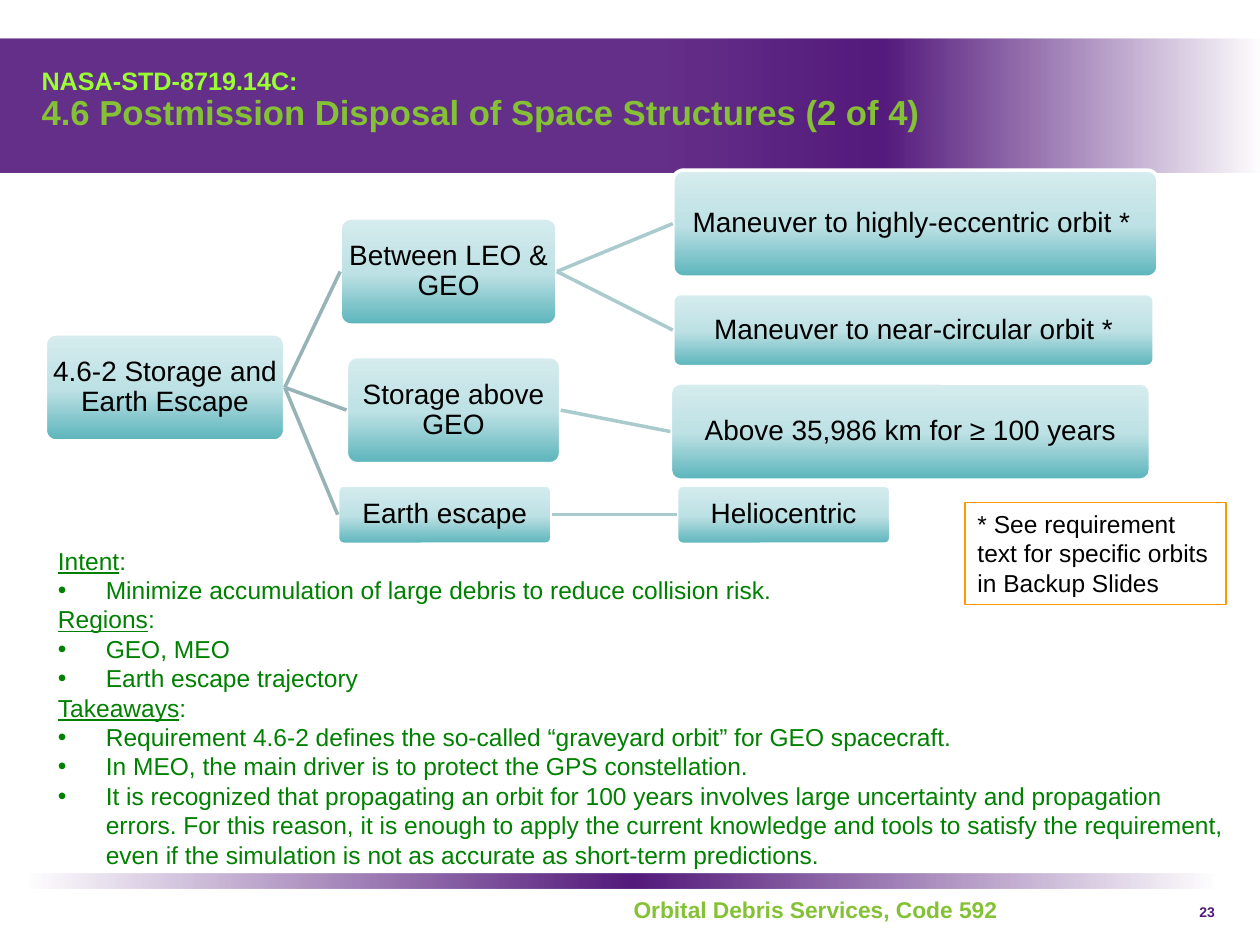
from dataclasses import dataclass
from typing import NamedTuple, Optional

from lxml.etree import SubElement
from pptx import Presentation
from pptx.dml.color import RGBColor
from pptx.enum.shapes import MSO_CONNECTOR, MSO_SHAPE
from pptx.enum.text import MSO_ANCHOR, MSO_AUTO_SIZE, PP_ALIGN
from pptx.oxml.ns import qn
from pptx.util import Inches, Pt


class Stop(NamedTuple):
    pos: int
    color: str
    alpha: int = 100


@dataclass(frozen=True)
class Theme:
    font: str = "Arial"
    purple: str = "541A7C"
    green: str = "84C134"
    lime: str = "99FF33"
    body: str = "008000"
    black: str = "000000"
    white: str = "FFFFFF"
    orange: str = "FF9900"
    link_1: str = "96B3B6"
    link_2: str = "AACBCE"
    teal: tuple = (Stop(0, "5AB4BB"), Stop(48, "BDE1E4"), Stop(100, "D6ECEE"))
    kicker_pt: float = 14.4
    title_pt: float = 19.8
    node_pt: float = 16
    text_pt: float = 14
    footer_pt: float = 13
    number_pt: float = 8


class Box(NamedTuple):
    x: float
    y: float
    w: float
    h: float


@dataclass(frozen=True)
class Node:
    text: str
    box: Box
    children: tuple = ()


T = Theme()

TREE = Node("4.6-2 Storage and Earth Escape", Box(0.36, 2.65, 1.9, 0.85), (
    Node("Between LEO & GEO", Box(2.7, 1.73, 1.72, 0.85), (
        Node("Maneuver to highly-eccentric orbit * ", Box(5.34, 1.35, 3.85, 0.85)),
        Node("Maneuver to near-circular orbit *", Box(5.34, 2.33, 3.82, 0.58)),
    )),
    Node("Storage above GEO", Box(2.75, 2.83, 1.7, 0.85), (
        Node("Above 35,986 km for ≥ 100 years", Box(5.32, 3.04, 3.81, 0.77)),
    )),
    Node("Earth escape", Box(2.68, 3.85, 1.7, 0.47), (
        Node("Heliocentric", Box(5.37, 3.85, 1.7, 0.47)),
    )),
))

SECTIONS = {
    "Intent": ["Minimize accumulation of large debris to reduce collision risk."],
    "Regions": ["GEO, MEO", "Earth escape trajectory"],
    "Takeaways": [
        "Requirement 4.6-2 defines the so-called “graveyard orbit” for GEO spacecraft.",
        "In MEO, the main driver is to protect the GPS constellation.",
        "It is recognized that propagating an orbit for 100 years involves large "
        "uncertainty and propagation errors. For this reason, it is enough to apply "
        "the current knowledge and tools to satisfy the requirement, even if the "
        "simulation is not as accurate as short-term predictions.",
    ],
}


def rgb(color: str) -> RGBColor:
    return RGBColor.from_string(color)


def add_run(p, text: str, size: float, color: str, bold: bool = False,
            underline: Optional[bool] = None) -> None:
    r = p.add_run()
    r.text = text
    r.font.name, r.font.size = T.font, Pt(size)
    r.font.bold, r.font.underline = bold, underline
    r.font.color.rgb = rgb(color)


def place(sp, box: Box) -> None:
    sp.left, sp.top, sp.width, sp.height = map(Inches, box)


def add_gradient_shape(s, kind, box: Box, stops: tuple, angle: int):
    sp = s.shapes.add_shape(kind, *map(Inches, box))
    sp.shadow.inherit = False
    sp.fill.gradient()
    sp.fill.gradient_angle = angle
    stop_list = sp.element.spPr.find(qn("a:gradFill")).find(qn("a:gsLst"))
    for old in list(stop_list):
        stop_list.remove(old)
    for stop in stops:
        gs = SubElement(stop_list, qn("a:gs"), pos=str(stop.pos * 1000))
        clr = SubElement(gs, qn("a:srgbClr"), val=stop.color)
        if stop.alpha < 100:
            SubElement(clr, qn("a:alpha"), val=str(stop.alpha * 1000))
    return sp


def add_band(s, box: Box, stops: tuple) -> None:
    sp = add_gradient_shape(s, MSO_SHAPE.RECTANGLE, box, stops, 0)
    sp.line.fill.background()


def add_label(s, box: Box, text: str, size: float, color: str, bold: bool = False,
              align=PP_ALIGN.LEFT):
    sp = s.shapes.add_textbox(*map(Inches, box))
    tf = sp.text_frame
    tf.word_wrap = True
    p = tf.paragraphs[0]
    p.alignment = align
    add_run(p, text, size, color, bold)
    return sp


def add_link(s, parent, child, color: str) -> None:
    c = s.shapes.add_connector(MSO_CONNECTOR.STRAIGHT, 0, 0, 0, 0)
    c.begin_connect(parent, 3)
    c.end_connect(child, 1)
    c.line.color.rgb, c.line.width = rgb(color), Pt(2)
    SubElement(c.element.spPr, qn("a:effectLst"))


def add_node(s, node: Node, level: int = 0):
    sp = add_gradient_shape(s, MSO_SHAPE.ROUNDED_RECTANGLE, node.box, T.teal, 90)
    sp.adjustments[0] = 0.1
    sp.line.color.rgb, sp.line.width = rgb(T.white), Pt(2)
    tf = sp.text_frame
    tf.word_wrap, tf.vertical_anchor = True, MSO_ANCHOR.MIDDLE
    tf.margin_left = tf.margin_right = tf.margin_top = tf.margin_bottom = Inches(0.01)
    p = tf.paragraphs[0]
    p.alignment, p.line_spacing = PP_ALIGN.CENTER, 0.9
    add_run(p, node.text, T.node_pt, T.black)
    for child in node.children:
        add_link(s, sp, add_node(s, child, level + 1), (T.link_1, T.link_2)[level])
    return sp


def fill_title(sp) -> None:
    place(sp, Box(0.23, 0.53, 7.43, 0.54))
    tf = sp.text_frame
    tf.auto_size, tf.vertical_anchor = MSO_AUTO_SIZE.NONE, MSO_ANCHOR.MIDDLE
    p = tf.paragraphs[0]
    p.alignment, p.line_spacing = PP_ALIGN.LEFT, 0.9
    add_run(p, "NASA-STD-8719.14C:", T.kicker_pt, T.lime, True)
    p.add_line_break()
    SubElement(p._p[-1], qn("a:rPr"), sz=str(round(T.kicker_pt * 100)))
    add_run(p, "4.6 Postmission Disposal of Space Structures (2 of 4)",
            T.title_pt, T.green, True)


def add_body_line(tf, first: bool, indent: float):
    p = tf.paragraphs[0] if first else tf.add_paragraph()
    p.space_before = Pt(0)
    pPr = p._p.get_or_add_pPr()
    pPr.set("marL", str(Inches(indent)))
    pPr.set("indent", str(-Inches(indent)))
    if indent:
        SubElement(pPr, qn("a:buChar"), char="•")
    else:
        SubElement(pPr, qn("a:buNone"))
    return p


def fill_body(sp) -> None:
    place(sp, Box(0.36, 4.28, 9.53, 2.69))
    tf = sp.text_frame
    tf.auto_size = MSO_AUTO_SIZE.SHAPE_TO_FIT_TEXT
    for i, (heading, lines) in enumerate(SECTIONS.items()):
        p = add_body_line(tf, i == 0, 0)
        add_run(p, heading, T.text_pt, T.body, underline=True)
        add_run(p, ":", T.text_pt, T.body)
        for line in lines:
            add_run(add_body_line(tf, False, 0.38), line, T.text_pt, T.body)


def main() -> None:
    """Build the postmission disposal slide and save it."""
    prs = Presentation()
    prs.slide_width, prs.slide_height = Inches(10), Inches(7.5)
    s = prs.slides.add_slide(prs.slide_layouts[1])
    title, body = s.shapes.title, s.placeholders[1]
    add_band(s, Box(0, 0.31, 10, 1.06),
             (Stop(0, T.purple, 90), Stop(53, T.purple, 90), Stop(70, T.purple), Stop(100, T.purple, 0)))
    add_band(s, Box(0.23, 6.93, 9.41, 0.12),
             (Stop(0, T.purple, 0), Stop(51, T.purple), Stop(100, T.purple, 0)))
    add_label(s, Box(4.93, 7.06, 3.22, 0.36), "Orbital Debris Services, Code 592",
              T.footer_pt, T.green, True)
    for sp, fill in ((title, fill_title), (body, fill_body)):
        fill(sp)
        s.shapes.element.append(sp.element)
    add_node(s, TREE)
    note = add_label(s, Box(7.66, 3.99, 2.07, 0.81),
                     "* See requirement text for specific orbits in Backup Slides",
                     T.text_pt, T.black)
    note.line.color.rgb, note.line.width = rgb(T.orange), Pt(0.75)
    add_label(s, Box(9.35, 7.12, 0.39, 0.25), "23", T.number_pt, T.purple, True, PP_ALIGN.RIGHT)
    prs.save("out.pptx")


if __name__ == "__main__":
    main()
